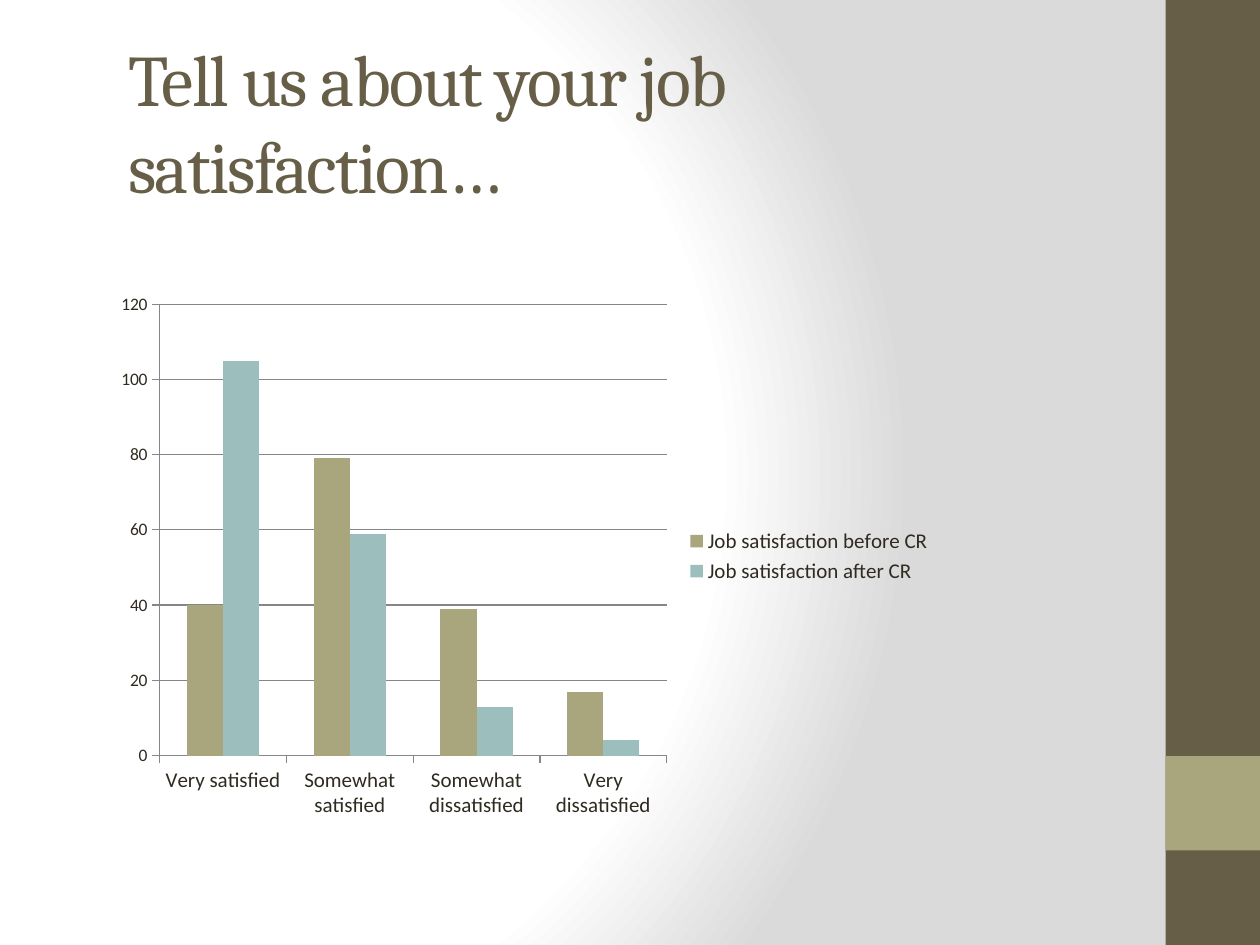
from dataclasses import dataclass

from pptx import Presentation
from pptx.chart.data import CategoryChartData
from pptx.dml.color import RGBColor
from pptx.enum.chart import XL_CHART_TYPE, XL_LEGEND_POSITION, XL_TICK_MARK
from pptx.enum.shapes import MSO_SHAPE
from pptx.enum.text import MSO_ANCHOR
from pptx.oxml import parse_xml
from pptx.oxml.ns import nsdecls
from pptx.util import Inches, Pt

WIDTH, HEIGHT = 10, 7.5
OLIVE, SAGE, TEAL, INK, GRID = "675E47", "A9A57C", "9CBEBD", "2F2B20", "868686"
CATEGORIES = ("Very satisfied", "Somewhat satisfied",
              "Somewhat dissatisfied", "Very dissatisfied")


@dataclass
class Box:
    """A rectangle given as shares of the slide's width and height."""
    x: float
    y: float
    w: float
    h: float

    def emu(self):
        return (Inches(self.x * WIDTH), Inches(self.y * HEIGHT),
                Inches(self.w * WIDTH), Inches(self.h * HEIGHT))


@dataclass
class Band:
    box: Box
    color: str


@dataclass
class Series:
    name: str
    values: tuple
    color: str


BANDS = (Band(Box(0.925, 0, 0.075, 1), OLIVE),
         Band(Box(0.925, 0.8, 0.075, 0.1), SAGE))
SERIES = (Series("Job satisfaction before CR", (40, 79, 39, 17), SAGE),
          Series("Job satisfaction after CR", (105, 59, 13, 4), TEAL))


def rgb(value: str) -> RGBColor:
    return RGBColor.from_string(value)


def set_background(slide) -> None:
    """Radial gradient, white on the left fading to grey."""
    stops = "".join(
        f'<a:gs pos="{pos * 1000}"><a:srgbClr val="{color}"/></a:gs>'
        for pos, color in ((0, "FFFFFF"), (75, "FFFFFF"), (100, "DADADA")))
    bg = parse_xml(
        f'<p:bg {nsdecls("p", "a")}><p:bgPr><a:gradFill rotWithShape="1">'
        f'<a:gsLst>{stops}</a:gsLst><a:path path="circle">'
        '<a:fillToRect l="20000" t="50000" r="100000" b="50000"/></a:path>'
        '</a:gradFill><a:effectLst/></p:bgPr></p:bg>')
    slide.element.cSld.insert(0, bg)


def add_band(slide, band: Band) -> None:
    sp = slide.shapes.add_shape(MSO_SHAPE.RECTANGLE, *band.box.emu())
    sp.shadow.inherit = False
    sp.fill.solid()
    sp.fill.fore_color.rgb = rgb(band.color)
    sp.line.fill.background()


def add_text(slide, box: Box, text: str, *, size: float, font: str,
             color: str, spacing: float = 0) -> None:
    tf = slide.shapes.add_textbox(*box.emu()).text_frame
    tf.word_wrap = True
    tf.vertical_anchor = MSO_ANCHOR.MIDDLE
    tf.margin_right = Inches(0.3)
    r = tf.paragraphs[0].add_run()
    r.text = text
    set_font(r.font, size, color, font)
    r.font._element.set("spc", str(int(spacing * 100)))


def set_font(font, size: float, color: str = INK, name: str = "Calibri") -> None:
    font.size = Pt(size)
    font.name = name
    font.color.rgb = rgb(color)


def set_line(line) -> None:
    line.color.rgb = rgb(GRID)
    line.width = Pt(0.75)


def add_column_chart(slide, box: Box) -> None:
    data = CategoryChartData()
    data.categories = CATEGORIES
    for s in SERIES:
        data.add_series(s.name, s.values)
    chart = slide.shapes.add_chart(
        XL_CHART_TYPE.COLUMN_CLUSTERED, *box.emu(), data).chart
    chart.has_title = False
    set_font(chart.font, 10)

    plot = chart.plots[0]
    plot.gap_width = 150
    plot.overlap = 0
    plot.vary_by_categories = False
    for s, drawn in zip(SERIES, plot.series):
        drawn.format.fill.solid()
        drawn.format.fill.fore_color.rgb = rgb(s.color)

    for axis, size in ((chart.category_axis, 12), (chart.value_axis, 10)):
        axis.major_tick_mark = XL_TICK_MARK.OUTSIDE
        axis.minor_tick_mark = XL_TICK_MARK.NONE
        set_font(axis.tick_labels.font, size)
        set_line(axis.format.line)
    axis = chart.value_axis
    axis.minimum_scale, axis.maximum_scale, axis.major_unit = 0, 120, 20
    set_line(axis.major_gridlines.format.line)

    chart.has_legend = True
    chart.legend.position = XL_LEGEND_POSITION.RIGHT
    chart.legend.include_in_layout = False
    set_font(chart.legend.font, 12)


def main() -> None:
    prs = Presentation()
    prs.slide_width, prs.slide_height = Inches(WIDTH), Inches(HEIGHT)
    slide = prs.slides.add_slide(prs.slide_layouts[6])
    set_background(slide)
    for band in BANDS:
        add_band(slide, band)
    add_text(slide, Box(0.092, 0.044, 0.8, 0.168),
             "Tell us about your job satisfaction…",
             size=41.4, font="Cambria", color=OLIVE, spacing=-1)
    add_column_chart(slide, Box(0.083, 0.3, 0.667, 0.577))
    prs.save("out.pptx")


if __name__ == "__main__":
    main()
